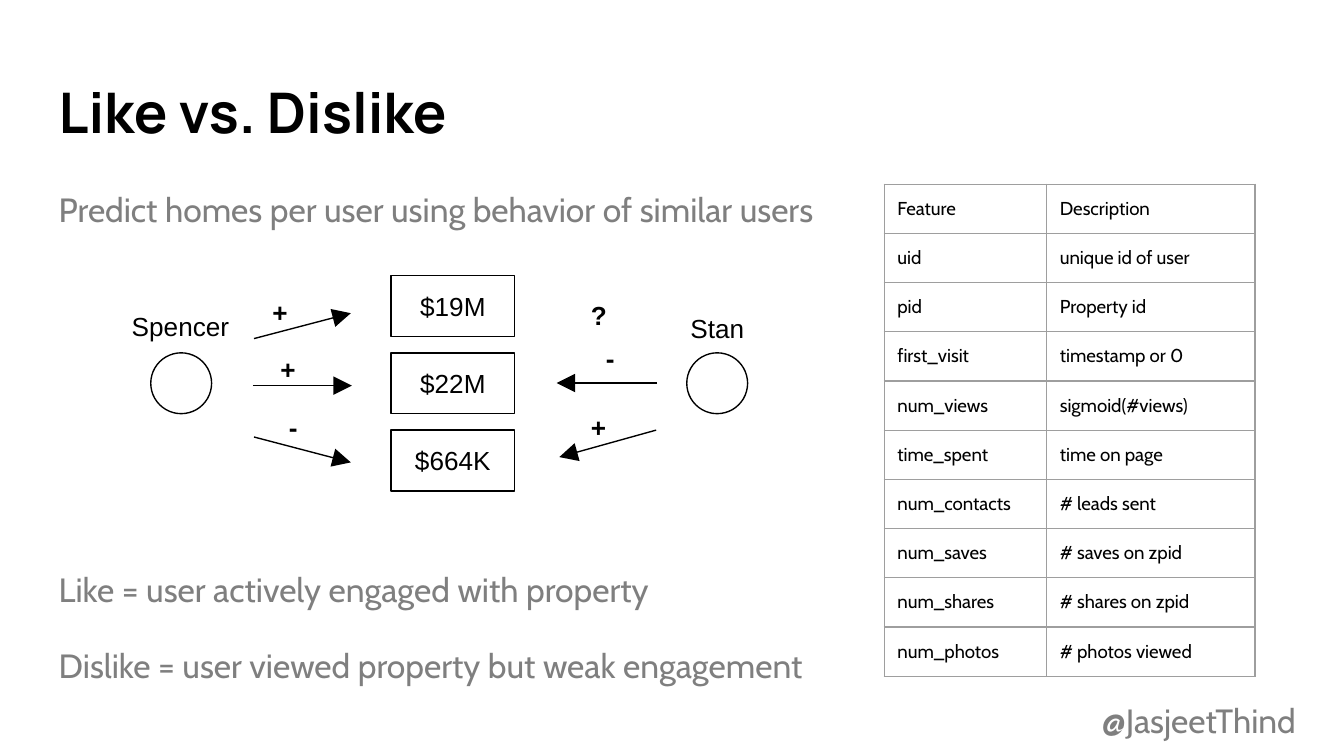
from pptx import Presentation
from pptx.dml.color import RGBColor
from pptx.enum.shapes import MSO_CONNECTOR, MSO_SHAPE
from pptx.enum.text import MSO_ANCHOR, PP_ALIGN
from pptx.oxml.ns import qn
from pptx.util import Cm, Pt
from lxml.etree import SubElement

COLORS = {"ink": "000000", "gray": "7F7F7F", "grid": "9E9E9E"}
PAD = Cm(0.25)

ROWS = [
    ("Feature", "Description"),
    ("uid", "unique id of user"),
    ("pid", "Property id"),
    ("first_visit", "timestamp or 0"),
    ("num_views", "sigmoid(#views)"),
    ("time_spent", "time on page"),
    ("num_contacts", "# leads sent"),
    ("num_saves", "# saves on zpid"),
    ("num_shares", "# shares on zpid"),
    ("num_photos", "# photos viewed"),
]
POINTS = [
    "Predict homes per user using behavior of similar users",
    "Like = user actively engaged with property",
    "Dislike = user viewed property but weak engagement",
]
GAPS = [0, 179, 16]  # points before each line; the diagram fills the large one
PRICES = ["$19M", "$22M", "$664K"]
ARROWS = [  # x1, y1, x2, y2
    (4.8, 6.4, 6.63, 5.92),
    (4.78, 7.29, 6.65, 7.29),
    (4.8, 8.26, 6.63, 8.74),
    (12.42, 7.24, 10.52, 7.24),
    (12.4, 8.13, 10.57, 8.64),
]
SIGNS = [  # text, left, top
    ("+", 4.9, 5.36),
    ("+", 5.05, 6.43),
    ("-", 5.21, 7.52),
    ("?", 10.92, 5.41),
    ("-", 11.2, 6.22),
    ("+", 10.92, 7.52),
]
USERS = [  # name, name left, name top, name width, circle left
    ("Spencer", 2.24, 5.61, 2.44, 2.85),
    ("Stan", 12.8, 5.66, 1.7, 12.98),
]


def tint(name):
    return RGBColor.from_string(COLORS[name])


def style(para, size, face, color="ink", bold=False):
    font = para.font
    font.size, font.name, font.bold = Pt(size), face, bold
    font.color.rgb = tint(color)


def inset(part):
    part.margin_left = part.margin_right = PAD
    part.margin_top = part.margin_bottom = PAD


def place(shape, left, top, width, height):
    shape.left, shape.top = Cm(left), Cm(top)
    shape.width, shape.height = Cm(width), Cm(height)
    inset(shape.text_frame)


def add_title(slide):
    title = slide.shapes.title
    place(title, 0.86, 1.24, 23.67, 1.73)
    title.text_frame.vertical_anchor = MSO_ANCHOR.MIDDLE
    para = title.text_frame.paragraphs[0]
    para.text = "Like vs. Dislike"
    para.alignment = PP_ALIGN.LEFT
    style(para, 30, "Manrope", bold=True)


def add_body(slide):
    body = slide.placeholders[1]
    place(body, 0.86, 3.2, 23.67, 9.5)
    frame = body.text_frame
    frame.text = "\n".join(POINTS)
    for para, gap in zip(frame.paragraphs, GAPS):
        para.line_spacing = 1.15
        para.space_before = Pt(gap)
        style(para, 18, "Cabin", "gray")
        props = para._p.get_or_add_pPr()
        props.set("marL", "0")
        props.set("indent", "0")
        props.insert_element_before(
            props.makeelement(qn("a:buNone"), {}),
            "a:tabLst", "a:defRPr", "a:extLst")


def add_outline(slide, kind, left, top, width, height, text=""):
    shape = slide.shapes.add_shape(
        kind, Cm(left), Cm(top), Cm(width), Cm(height))
    shape.shadow.inherit = False
    shape.fill.background()
    shape.line.color.rgb = tint("ink")
    shape.line.width = Pt(0.75)
    if text:
        frame = shape.text_frame
        inset(frame)
        frame.vertical_anchor = MSO_ANCHOR.MIDDLE
        para = frame.paragraphs[0]
        para.text = text
        para.alignment = PP_ALIGN.CENTER
        style(para, 14, "Arial")


def add_label(slide, text, left, top, width, height=0.84,
              size=14, face="Arial", color="ink", bold=False):
    box = slide.shapes.add_textbox(
        Cm(left), Cm(top), Cm(width), Cm(height))
    frame = box.text_frame
    frame.word_wrap = True
    inset(frame)
    para = frame.paragraphs[0]
    para.text = text
    style(para, size, face, color, bold)
    return frame


def add_arrow(slide, x1, y1, x2, y2):
    line = slide.shapes.add_connector(
        MSO_CONNECTOR.STRAIGHT, Cm(x1), Cm(y1), Cm(x2), Cm(y2))
    line.line.color.rgb = tint("ink")
    line.line.width = Pt(0.75)
    SubElement(line.line._get_or_add_ln(), qn("a:tailEnd"),
               type="triangle", w="lg", len="lg")
    SubElement(line._element.spPr, qn("a:effectLst"))


def add_border(cell):
    props = cell._tc.get_or_add_tcPr()
    for spot, side in enumerate(("lnL", "lnR", "lnT", "lnB")):
        edge = props.makeelement(qn(f"a:{side}"), {"w": str(Pt(0.75))})
        fill = SubElement(edge, qn("a:solidFill"))
        SubElement(fill, qn("a:srgbClr"), val=COLORS["grid"])
        props.insert(spot, edge)


def add_grid(slide):
    high = 0.93
    table = slide.shapes.add_table(
        len(ROWS), 2, Cm(16.71), Cm(3.48), Cm(7.01),
        Cm(high * len(ROWS))).table
    table.first_row = table.horz_banding = False
    for col, width in zip(table.columns, (3.07, 3.94)):
        col.width = Cm(width)
    for row, texts in zip(table.rows, ROWS):
        row.height = Cm(high)
        for cell, text in zip(row.cells, texts):
            inset(cell)
            cell.fill.background()
            add_border(cell)
            para = cell.text_frame.paragraphs[0]
            para.text = text
            style(para, 10, "Cabin")


def main():
    deck = Presentation()
    deck.slide_width, deck.slide_height = Cm(25.4), Cm(14.29)
    slide = deck.slides.add_slide(deck.slide_layouts[1])
    add_title(slide)
    add_body(slide)

    # Users, homes and the signs between them
    for name, left, top, width, spot in USERS:
        add_outline(slide, MSO_SHAPE.OVAL, spot, 6.67, 1.15, 1.15)
        add_label(slide, name, left, top, width)
    for i, price in enumerate(PRICES):
        add_outline(slide, MSO_SHAPE.RECTANGLE,
                    7.39, 5.21 + 1.46 * i, 2.34, 1.15, price)
    for ends in ARROWS:
        add_arrow(slide, *ends)
    for sign, left, top in SIGNS:
        add_label(slide, sign, left, top, 0.95, bold=True)

    # Feature table and handle
    add_grid(slide)
    handle = add_label(slide, "@JasjeetThind", 20.57, 12.93, 4.83, 1.37,
                       18, "Cabin", "gray")
    handle.vertical_anchor = MSO_ANCHOR.MIDDLE
    deck.save("out.pptx")


if __name__ == "__main__":
    main()
